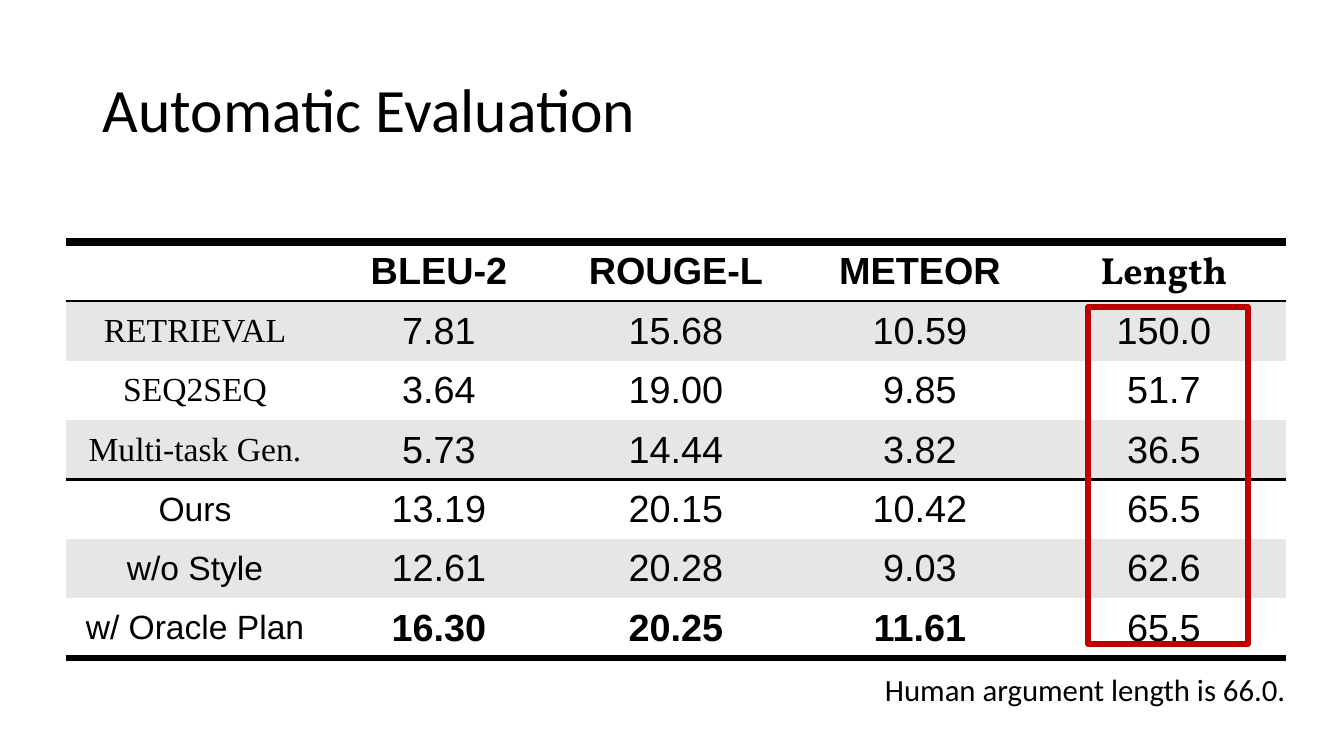
from lxml.etree import SubElement
from pptx import Presentation
from pptx.dml.color import RGBColor
from pptx.enum.shapes import MSO_SHAPE
from pptx.enum.text import MSO_ANCHOR, MSO_AUTO_SIZE, PP_ALIGN
from pptx.oxml.ns import qn
from pptx.util import Emu, Pt

PX = 914400 / 100.8
BLACK, WHITE, GREY, RED = "000000", "FFFFFF", "E7E6E6", "C00000"

COLUMN_WIDTHS = [258, 230, 244, 244, 244]
ROW_HEIGHT = 58
SCORES = [
    ["", "BLEU-2", "ROUGE-L", "METEOR", "Length"],
    ["RETRIEVAL", "7.81", "15.68", "10.59", "150.0"],
    ["SEQ2SEQ", "3.64", "19.00", "9.85", "51.7"],
    ["Multi-task Gen.", "5.73", "14.44", "3.82", "36.5"],
    ["Ours", "13.19", "20.15", "10.42", "65.5"],
    ["w/o Style", "12.61", "20.28", "9.03", "62.6"],
    ["w/ Oracle Plan", "16.30", "20.25", "11.61", "65.5"],
]
ROW_FILLS = [None, GREY, None, GREY, None, GREY, WHITE]
BASELINE_ROWS = range(1, 4)
# Width in points of the horizontal rule above each row index
RULES = {0: 6, 1: 1.5, 4: 2.25, 7: 4.5}


def px(n):
    return Emu(round(n * PX))


def color(hex_string):
    return RGBColor.from_string(hex_string)


def add_run(p, text, **formats):
    r = p.add_run()
    r.text = text
    r.font.color.rgb = color(BLACK)
    for name, value in formats.items():
        setattr(r.font, name, value)


def add_text(slide, box, text, size, frame_formats, line_spacing=None):
    s = slide.shapes.add_textbox(*map(px, box))
    tf = s.text_frame
    for name, value in frame_formats.items():
        setattr(tf, name, value)
    p = tf.paragraphs[0]
    p.line_spacing = line_spacing
    add_run(p, text, name="Calibri", size=Pt(size))


def set_borders(cell, top, bottom):
    """Rule the top and bottom edges; an edge without a width stays clear."""
    tc_pr = cell._tc.get_or_add_tcPr()
    for tag, width in (("lnL", None), ("lnR", None), ("lnT", top), ("lnB", bottom)):
        ln = SubElement(tc_pr, qn(f"a:{tag}"))
        if width:
            ln.set("w", str(Pt(width)))
            fill = SubElement(ln, qn("a:solidFill"))
            SubElement(fill, qn("a:srgbClr"), val=BLACK)
        else:
            SubElement(ln, qn("a:noFill"))


def cell_font(row, col):
    if row == 0:
        return dict(name="Vollkorn" if col == 4 else "Arial", size=Pt(27), bold=True)
    if col == 0:
        name = "Times New Roman" if row in BASELINE_ROWS else "Arial"
        return dict(name=name, size=Pt(24), bold=False)
    return dict(name="Arial", size=Pt(27), bold=row == 6 and col < 4)


def fill_cell(cell, row, col, text):
    formats = dict(
        vertical_anchor=MSO_ANCHOR.MIDDLE,
        margin_left=px(13), margin_right=px(13),
        margin_top=px(7), margin_bottom=px(7),
    )
    for name, value in formats.items():
        setattr(cell, name, value)
    set_borders(cell, RULES.get(row), RULES.get(row + 1))
    if ROW_FILLS[row]:
        cell.fill.solid()
        cell.fill.fore_color.rgb = color(ROW_FILLS[row])
    else:
        cell.fill.background()
    if text:
        p = cell.text_frame.paragraphs[0]
        p.alignment = PP_ALIGN.CENTER
        add_run(p, text, **cell_font(row, col))


def add_score_table(slide, left, top):
    width, height = sum(COLUMN_WIDTHS), ROW_HEIGHT * len(SCORES)
    frame = slide.shapes.add_table(
        len(SCORES), len(COLUMN_WIDTHS), px(left), px(top), px(width), px(height))
    table = frame.table
    table.first_row = table.horz_banding = False
    for column, column_width in zip(table.columns, COLUMN_WIDTHS):
        column.width = px(column_width)
    for row, values in enumerate(SCORES):
        for col, text in enumerate(values):
            fill_cell(table.cell(row, col), row, col, text)


def add_highlight(slide, box):
    s = slide.shapes.add_shape(MSO_SHAPE.RECTANGLE, *map(px, box))
    s.shadow.inherit = False
    s.fill.background()
    s.line.color.rgb = color(RED)
    s.line.width = Pt(4)


def add_evaluation_slide(prs):
    slide = prs.slides.add_slide(prs.slide_layouts[6])
    add_text(slide, (93, 40, 1159, 146), "Automatic Evaluation", 44,
             dict(word_wrap=True, vertical_anchor=MSO_ANCHOR.MIDDLE), 0.9)
    add_score_table(slide, 66, 242)
    add_text(slide, (875, 666, 425, 47), "Human argument length is 66.0.", 22,
             dict(word_wrap=False, auto_size=MSO_AUTO_SIZE.SHAPE_TO_FIT_TEXT))
    add_highlight(slide, (1088, 307, 160, 337))


def main():
    prs = Presentation()
    prs.slide_width, prs.slide_height = px(1344), px(756)
    add_evaluation_slide(prs)
    prs.save("out.pptx")


if __name__ == "__main__":
    main()
